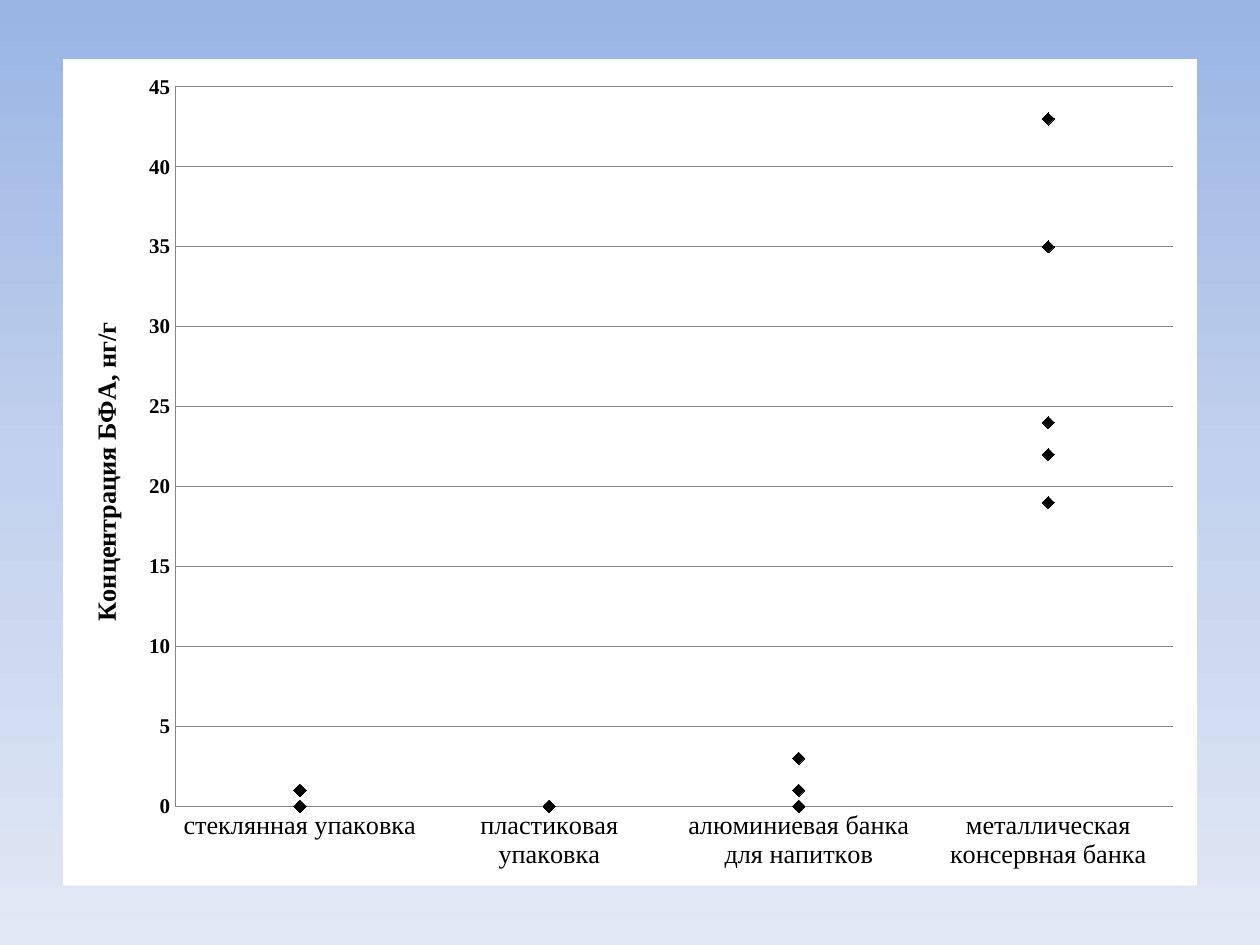
import copy
from dataclasses import dataclass

import lxml.etree
import pptx
import pptx.chart.data
import pptx.dml.color
import pptx.enum.chart
import pptx.oxml
import pptx.oxml.ns
import pptx.util

Inches = pptx.util.Inches
Pt = pptx.util.Pt
qn = pptx.oxml.ns.qn
FONT = "Times New Roman"
BLACK = "000000"
GRID = "868686"
CHART_WIDTH = Inches(9)
CHART_HEIGHT = Inches(6.56)


@dataclass
class GradientStop:
    position: float
    color: str


@dataclass
class Measurement:
    name: str
    values: tuple
    color: str


CATEGORIES = (
    "стеклянная упаковка",
    "пластиковая упаковка",
    "алюминиевая банка для напитков",
    "металлическая консервная банка",
)
MEASUREMENTS = (
    Measurement("Series 1", (0, 0, 3, 24), "4F81BD"),
    Measurement("Series 2", (1, 0, 0, 22), "C0504D"),
    Measurement("Series 3", (1, 0, 1, 43), "9BBB59"),
    Measurement("Series 4", (1, 0, 0, 19), "8064A2"),
    Measurement("Series 5", (0, 0, 0, 35), "4BACC6"),
)
BACKGROUND = (
    GradientStop(0, "9AB5E4"),
    GradientStop(0.5, "C2D1ED"),
    GradientStop(1, "E1E8F5"),
)


def set_color(color_format, value: str) -> None:
    color_format.rgb = pptx.dml.color.RGBColor.from_string(value)


def set_font(font, size: float, name: str = FONT, bold: bool = False) -> None:
    font.size = Pt(size)
    font.name = name
    font.bold = bold
    font.fill.solid()
    set_color(font.fill.fore_color, BLACK)


def paint_background(page, stops: tuple) -> None:
    fill = page.background.fill
    fill.gradient()
    fill.gradient_angle = 270
    stop_list = page.element.find(".//" + qn("a:gsLst"))
    while len(stop_list) < len(stops):
        stop_list.append(copy.deepcopy(stop_list[0]))
    for target, stop in zip(fill.gradient_stops, stops):
        target.position = stop.position
        set_color(target.color, stop.color)


def place(element, index: int, **lengths: int) -> None:
    layout = element.find(qn("c:layout"))
    if layout is None:
        layout = lxml.etree.Element(qn("c:layout"))
        element.insert(index, layout)
    for child in list(layout):
        layout.remove(child)
    manual = lxml.etree.SubElement(layout, qn("c:manualLayout"))
    settings = {"xMode": "edge", "yMode": "edge"}
    if "w" in lengths:
        settings = {"layoutTarget": "inner", **settings}
    for tag, length in lengths.items():
        settings[tag] = length / (CHART_WIDTH if tag in "xw" else CHART_HEIGHT)
    for tag, value in settings.items():
        lxml.etree.SubElement(manual, qn("c:" + tag)).set("val", str(value))


def fill_chart_area(chart, color: str) -> None:
    area = pptx.oxml.parse_xml(
        f"<c:spPr {pptx.oxml.ns.nsdecls('c', 'a')}>"
        f'<a:solidFill><a:srgbClr val="{color}"/></a:solidFill>'
        "<a:ln><a:noFill/></a:ln></c:spPr>"
    )
    chart.element.find(qn("c:chart")).addnext(area)


def style_line(line) -> None:
    line.width = Pt(0.5)
    set_color(line.color, GRID)


def style_axis(axis, size: float, bold: bool = False) -> None:
    axis.major_tick_mark = pptx.enum.chart.XL_TICK_MARK.NONE
    axis.minor_tick_mark = pptx.enum.chart.XL_TICK_MARK.NONE
    set_font(axis.tick_labels.font, size, bold=bold)
    style_line(axis.format.line)


def style_series(series, color: str) -> None:
    series.smooth = False
    set_color(series.format.line.color, color)
    series.format.line.fill.background()
    marker = series.marker
    marker.style = pptx.enum.chart.XL_MARKER_STYLE.DIAMOND
    marker.size = 7
    marker.format.fill.solid()
    set_color(marker.format.fill.fore_color, BLACK)
    set_color(marker.format.line.color, BLACK)


def add_value_title(axis, text: str) -> None:
    frame = axis.axis_title.text_frame
    frame.text = text
    set_font(frame.paragraphs[0].runs[0].font, 15, bold=True)
    title = axis.axis_title._element
    body = title.find(".//" + qn("a:bodyPr"))
    body.set("rot", "-5400000")
    body.set("vert", "horz")
    place(title, 1, x=Inches(0.17), y=Inches(2.05))


def add_concentration_chart(page) -> None:
    data = pptx.chart.data.CategoryChartData()
    data.categories = CATEGORIES
    for measurement in MEASUREMENTS:
        data.add_series(measurement.name, measurement.values)
    chart = page.shapes.add_chart(
        pptx.enum.chart.XL_CHART_TYPE.LINE_MARKERS,
        Inches(0.5), Inches(0.47), CHART_WIDTH, CHART_HEIGHT, data,
    ).chart
    set_font(chart.font, 10, "Calibri")
    chart.has_title = False
    chart.has_legend = False
    fill_chart_area(chart, "FFFFFF")
    place(
        chart.element.find(".//" + qn("c:plotArea")), 0,
        x=Inches(0.89), y=Inches(0.22), w=Inches(7.92), h=Inches(5.71),
    )

    style_axis(chart.category_axis, 15)
    values = chart.value_axis
    style_axis(values, 12, bold=True)
    values.minimum_scale = 0
    values.maximum_scale = 45
    values.major_unit = 5
    values.has_major_gridlines = True
    style_line(values.major_gridlines.format.line)
    add_value_title(values, "Концентрация БФА, нг/г")

    plot = chart.plots[0]
    plot.vary_by_categories = False
    for series, measurement in zip(plot.series, MEASUREMENTS):
        style_series(series, measurement.color)


def main() -> None:
    deck = pptx.Presentation()
    deck.slide_width = Inches(10)
    deck.slide_height = Inches(7.5)
    page = deck.slides.add_slide(deck.slide_layouts[6])
    paint_background(page, BACKGROUND)
    add_concentration_chart(page)
    deck.save("out.pptx")


if __name__ == "__main__":
    main()
